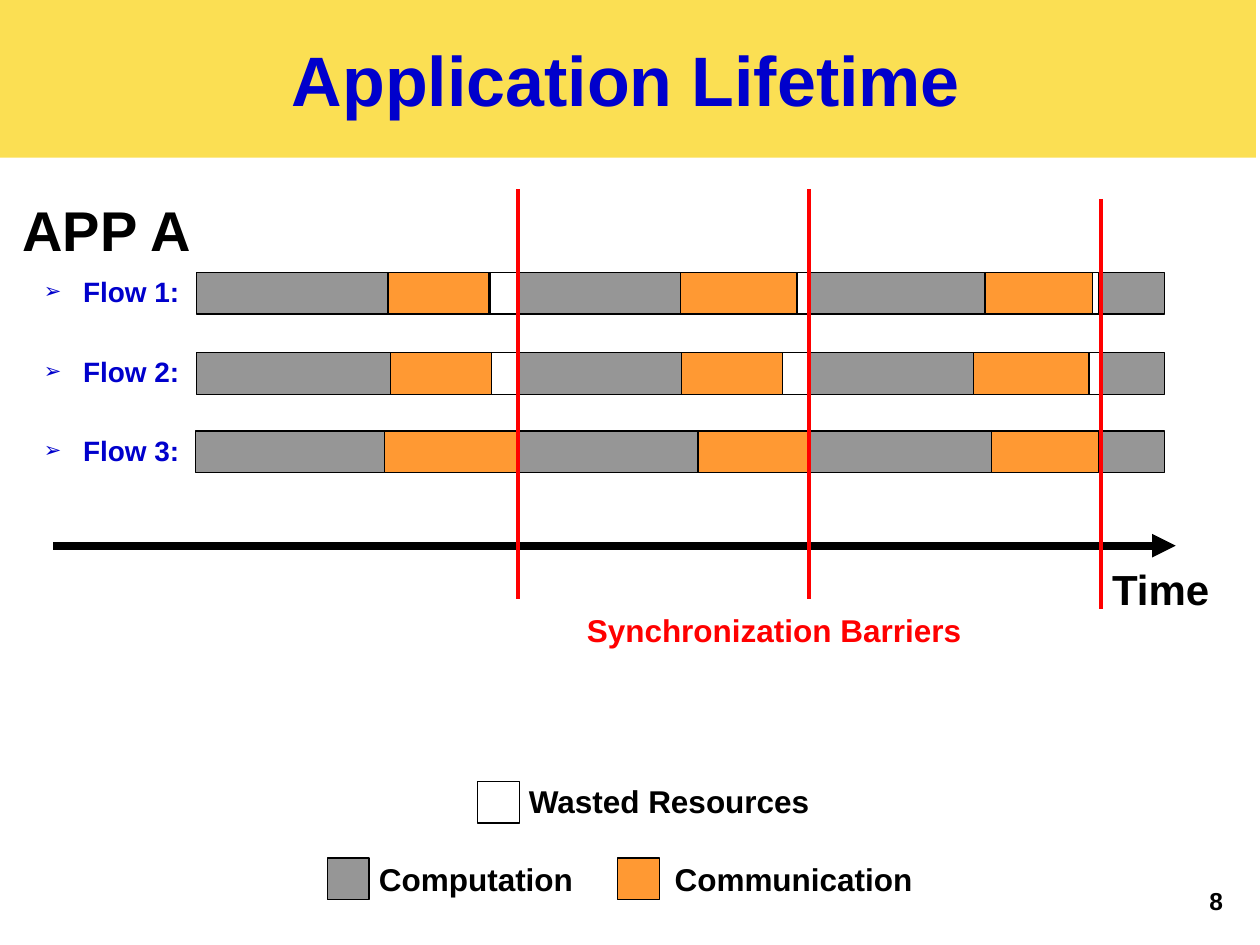
import pptx
import pptx.util
import pptx.dml.color
import pptx.enum.shapes
import pptx.enum.text
import pptx.oxml.ns
from lxml import etree

Cm = pptx.util.Cm
Pt = pptx.util.Pt
qn = pptx.oxml.ns.qn
RGBColor = pptx.dml.color.RGBColor

COLORS = {
    "banner": "FBDF53",
    "heading": "0000CC",
    "computation": "969696",
    "communication": "FF9933",
    "wasted": "FFFFFF",
    "barrier": "FF0000",
    "ink": "000000",
}
BLOCK_HEIGHT = 0.84


def add_block(left, top, width, color):
    shape = slide.shapes.add_shape(
        pptx.enum.shapes.MSO_SHAPE.RECTANGLE,
        Cm(left), Cm(top), Cm(width), Cm(BLOCK_HEIGHT),
    )
    shape.shadow.inherit = False
    shape.fill.solid()
    shape.fill.fore_color.rgb = RGBColor.from_string(COLORS[color])
    shape.line.color.rgb = RGBColor.from_string(COLORS["ink"])
    shape.line.width = Pt(0.75)


def write_text(shape, box, lines, size, color):
    for name, length in zip(("left", "top", "width", "height"), box):
        setattr(shape, name, Cm(length))
    frame = shape.text_frame
    frame.word_wrap = True
    frame.auto_size = pptx.enum.text.MSO_AUTO_SIZE.NONE
    frame.text = "\n".join(lines)
    font_format = {"name": "Arial", "size": Pt(size), "bold": True}
    for paragraph in frame.paragraphs:
        font = paragraph.runs[0].font
        for name, value in font_format.items():
            setattr(font, name, value)
        font.color.rgb = RGBColor.from_string(COLORS[color])
    return frame


presentation = pptx.Presentation()
presentation.slide_width = Cm(25.4)
presentation.slide_height = Cm(19.05)
slide = presentation.slides.add_slide(presentation.slide_layouts[3])
title, app_name, flow_list = slide.placeholders

title.fill.solid()
title.fill.fore_color.rgb = RGBColor.from_string(COLORS["banner"])
frame = write_text(title, (-0.08, 0, 25.4, 3.18), ["Application Lifetime"], 40, "heading")
frame.vertical_anchor = pptx.enum.text.MSO_ANCHOR.MIDDLE
frame.paragraphs[0].alignment = pptx.enum.text.PP_ALIGN.CENTER

frame = write_text(app_name, (0.2, 3.81, 6.55, 3.2), ["APP A"], 32, "ink")
frame.paragraphs[0].space_before = Pt(4)
properties = frame.paragraphs[0]._p.get_or_add_pPr()
properties.set("marL", "0")
properties.set("indent", "0")
etree.SubElement(properties, qn("a:buNone"))

flows = [f"Flow {number}:" for number in (1, 2, 3)]
frame = write_text(flow_list, (0, 5.41, 4.55, 4.45), flows, 16, "heading")
for index, paragraph in enumerate(frame.paragraphs):
    paragraph.space_before = Pt(26.2 if index else 2)
    properties = paragraph._p.get_or_add_pPr()
    properties.set("marL", str(Cm(1.42)))
    properties.set("indent", str(Cm(-0.79)))
    etree.SubElement(properties, qn("a:buSzPct")).set("val", "75000")
    etree.SubElement(properties, qn("a:buChar")).set("char", "➢")

BAR_RIGHT = 23.47
flow_bars = [
    (3.96, 5.49, {
        "communication": [(7.82, 2.04), (13.72, 2.34), (19.86, 2.18)],
        "wasted": [(9.88, 0.53), (16.08, 0.23), (22.02, 0.13)],
    }),
    (3.96, 7.11, {
        "communication": [(7.87, 2.06), (13.74, 2.03), (19.63, 2.31)],
        "wasted": [(9.91, 0.51), (15.77, 0.56), (21.97, 0.2)],
    }),
    (3.94, 8.69, {
        "communication": [(7.75, 2.67), (14.07, 2.24), (19.99, 2.16)],
    }),
]
for bar_left, top, phases in flow_bars:
    add_block(bar_left, top, BAR_RIGHT - bar_left, "computation")
    for phase, spans in phases.items():
        for left, width in spans:
            add_block(left, top, width, phase)

for left, top, color in [
    (9.63, 15.75, "wasted"),
    (6.6, 17.3, "computation"),
    (12.45, 17.3, "communication"),
]:
    add_block(left, top, BLOCK_HEIGHT, color)

time_axis = (1.07, 11, 23.7, 11, "ink", 4.5)
barriers = [
    (left, top, left, top + 8.26, "barrier", 2)
    for left, top in [(10.44, 3.81), (16.31, 3.81), (22.2, 4.01)]
]
for start_x, start_y, end_x, end_y, color, width in [time_axis, *barriers]:
    connector = slide.shapes.add_connector(
        pptx.enum.shapes.MSO_CONNECTOR.STRAIGHT,
        Cm(start_x), Cm(start_y), Cm(end_x), Cm(end_y),
    )
    connector.line.color.rgb = RGBColor.from_string(COLORS[color])
    connector.line.width = Pt(width)
    shape_properties = connector.element.spPr
    if color == "ink":
        outline = shape_properties.find(qn("a:ln"))
        etree.SubElement(outline, qn("a:tailEnd")).set("type", "triangle")
    etree.SubElement(shape_properties, qn("a:effectLst"))

labels = [
    ("Time", (22.17, 11.24, 3.2, 1.3), 24, "ink"),
    ("Synchronization Barriers", (11.58, 12.19, 9, 1.02), 18, "barrier"),
    ("Wasted Resources", (10.41, 15.65, 7, 1.02), 18, "ink"),
    ("Computation", (7.39, 17.22, 5, 1.02), 18, "ink"),
    ("Communication", (13.35, 17.22, 6, 1.02), 18, "ink"),
    ("8", (24.13, 17.73, 1.27, 1.32), 14, "ink"),
]
for text, box, size, color in labels:
    label = slide.shapes.add_textbox(0, 0, 0, 0)
    write_text(label, box, [text], size, color)

presentation.save("out.pptx")
